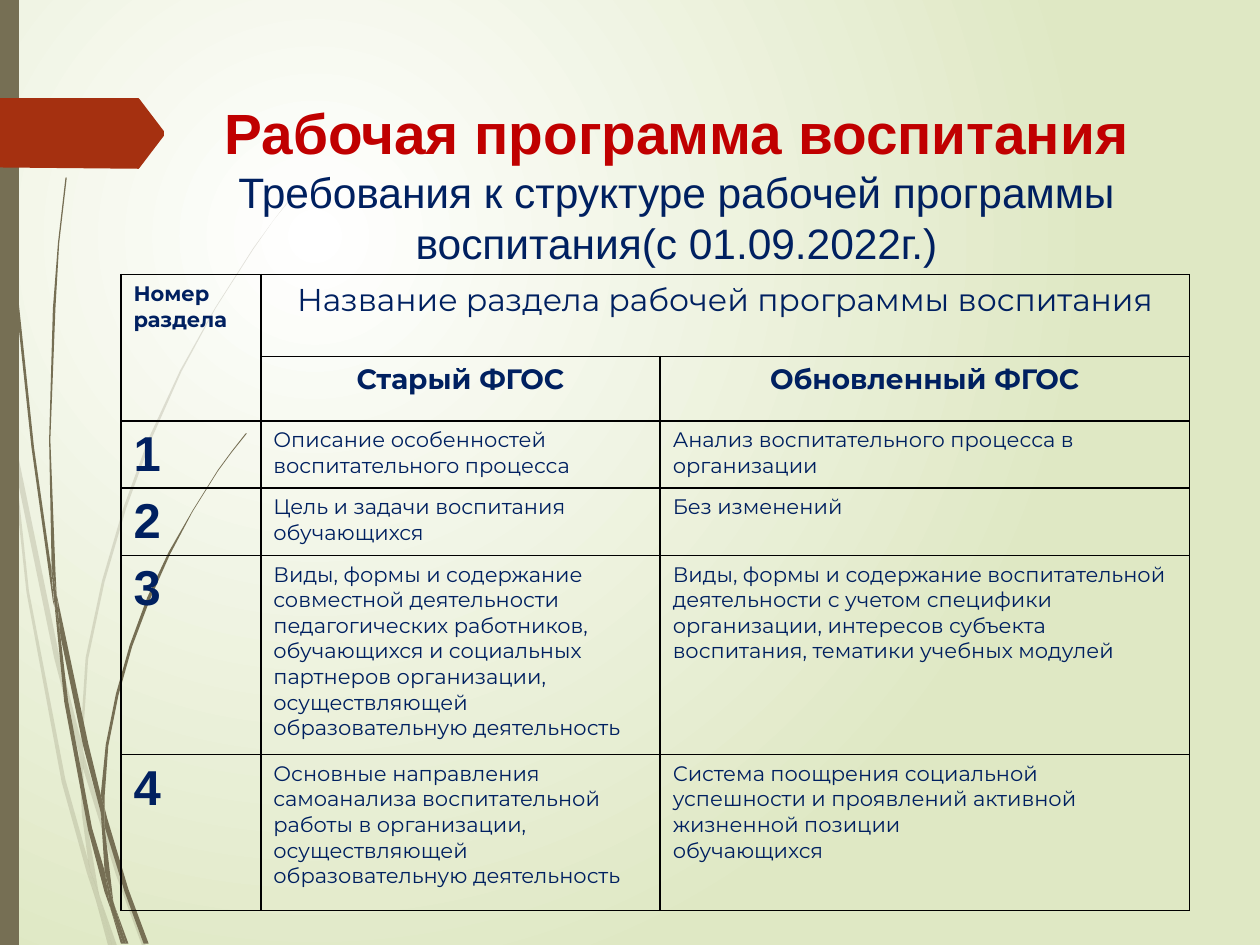
import itertools

import pptx
import pptx.dml.color
import pptx.enum.shapes
import pptx.enum.text
import pptx.oxml
import pptx.oxml.ns
import pptx.util

PX = 9144  # EMU in one px: 100 px to the inch
COLORS = {
    "white": "FFFFFF", "pale green": "DFE8C4", "olive": "766F54", "rust": "A53010",
    "red": "C00000", "navy": "002060", "black": "000000",
}
ALIGN = pptx.enum.text.PP_ALIGN

TITLE = "Рабочая программа воспитания"
SUBTITLE = "Требования к структуре рабочей программы воспитания(с 01.09.2022г.)"
HEADER_NUMBER = "Номер\nраздела"
HEADER_NAME = "Название раздела рабочей программы воспитания"
HEADER_VERSIONS = ("Старый ФГОС", "Обновленный ФГОС")
SECTIONS = [
    ("Описание особенностей воспитательного процесса",
     "Анализ воспитательного процесса в организации"),
    ("Цель и задачи воспитания обучающихся",
     "Без изменений"),
    ("Виды, формы и содержание совместной деятельности педагогических работников,\n"
     "обучающихся и социальных партнеров организации, осуществляющей\n"
     "образовательную деятельность",
     "Виды, формы и содержание воспитательной деятельности с учетом специфики "
     "организации, интересов субъекта воспитания, тематики учебных модулей"),
    ("Основные направления самоанализа воспитательной работы в организации,\n"
     "осуществляющей образовательную деятельность",
     "Система поощрения социальной успешности и проявлений активной жизненной позиции\n"
     "обучающихся"),
]
COLUMN_WIDTHS = (111, 317, 420)
ROW_HEIGHTS = (65, 51, 53, 53, 158, 124)

# Outlines of the grass blades, as corner points in px
FAINT_BLADES = [
    [(8, 350), (6, 322), (0, 282), (0, 299), (8, 344)],
    [(43, 522), (63, 599), (64, 586), (47, 520), (11, 345), (13, 376)],
    [(69, 607), (66, 596), (66, 610), (92, 694), (113, 751), (116, 751), (95, 692)],
    [(89, 751), (93, 751), (79, 711)],
    [(70, 683), (52, 619), (23, 469), (13, 376), (8, 350), (21, 470), (49, 621),
     (69, 693), (76, 714), (74, 707)],
    [(63, 599), (65, 646), (70, 683), (72, 692), (79, 711), (78, 706), (68, 646),
     (66, 610), (66, 608)],
    [(66, 584), (70, 523), (83, 462), (100, 404), (120, 349), (144, 295), (171, 245),
     (201, 198), (217, 175), (234, 154), (234, 153), (217, 175), (201, 197), (171, 244),
     (143, 294), (118, 348), (98, 403), (81, 461), (68, 522), (64, 584), (64, 586), (66, 596)],
    [(76, 714), (86, 751), (89, 751)],
    [(66, 608), (66, 610), (66, 596), (64, 586), (63, 599)],
    [(72, 692), (70, 683), (74, 707), (76, 714), (89, 751), (79, 711)],
]
SOLID_BLADES = [
    [(5, 110), (12, 233), (25, 355), (42, 477), (43, 481), (41, 457), (41, 453), (27, 355),
     (14, 232), (6, 109), (3, 48), (3, 0), (2, 0), (3, 48)],
    [(66, 592), (80, 645), (80, 633), (80, 631), (70, 590), (45, 472), (48, 505)],
    [(85, 649), (83, 641), (83, 656), (99, 708), (114, 749), (118, 749), (102, 706)],
    [(83, 691), (73, 657), (54, 556), (48, 505), (43, 477), (51, 557), (70, 659),
     (83, 708), (88, 722), (87, 717)],
    [(45, 472), (44, 453), (40, 349), (44, 245), (47, 193), (53, 141), (52, 141),
     (46, 193), (42, 245), (39, 349), (41, 449)],
    [(100, 749), (102, 749), (91, 719)],
    [(43, 477), (48, 505), (45, 472), (41, 449), (41, 453)],
    [(83, 633), (86, 592), (94, 552), (105, 513), (119, 476), (135, 440), (153, 406),
     (173, 374), (184, 359), (196, 344), (195, 344), (184, 358), (173, 373), (153, 405),
     (134, 438), (117, 474), (103, 512), (92, 551), (84, 591), (80, 631), (83, 641)],
    [(88, 722), (96, 749), (98, 749)],
    [(80, 645), (83, 691), (87, 706), (91, 719), (90, 716), (83, 656), (81, 651)],
    [(80, 645), (81, 651), (83, 656), (83, 641), (80, 631), (80, 633)],
    [(87, 706), (83, 691), (87, 717), (88, 722), (98, 749), (100, 749), (91, 719)],
]
PAGE_ARROW = [(130, 108), (111, 133), (110, 134), (0, 133), (0, 78), (110, 78),
              (111, 79), (130, 104)]


def rgb(color):
    return pptx.dml.color.RGBColor.from_string(COLORS[color])


def px(*lengths):
    return [pptx.util.Emu(length * PX) for length in lengths]


def write(frame, text, size, font="Montserrat", color="navy", bold=False, align=ALIGN.LEFT):
    """Add each line of text to the frame as a paragraph."""
    frame.word_wrap = True
    for line in text.split("\n"):
        paragraph = frame.add_paragraph() if frame.text else frame.paragraphs[0]
        paragraph.alignment = align
        run = paragraph.add_run()
        run.text = line
        run.font.size = pptx.util.Pt(size)
        run.font.name = font
        run.font.bold = bold
        run.font.color.rgb = rgb(color)


def parse_xml(tag, attributes="", content=""):
    return pptx.oxml.parse_xml(
        f'<a:{tag} {pptx.oxml.ns.nsdecls("a")} {attributes}>{content}</a:{tag}>')


def paint(shape, color, opacity=100):
    shape.shadow.inherit = False
    shape.fill.solid()
    shape.fill.fore_color.rgb = rgb(color)
    shape.line.fill.background()
    if opacity < 100:
        color_element = next(shape.element.iter(pptx.oxml.ns.qn("a:srgbClr")))
        color_element.append(parse_xml("alpha", f'val="{opacity * 1000}"'))


def draw_outline(slide, points, color, opacity=100):
    builder = slide.shapes.build_freeform(*points[0], scale=PX)
    builder.add_line_segments(points[1:], close=True)
    paint(builder.convert_to_shape(), color, opacity)


def set_background(slide):
    """Fill with a radial gradient centred a quarter of the way in and down."""
    fill = slide.background.fill
    fill.gradient()
    for stop, color in zip(fill.gradient_stops, ("white", "pale green")):
        stop.color.rgb = rgb(color)
    linear = next(slide.background._cSld.iter(pptx.oxml.ns.qn("a:lin")))
    linear.getparent().replace(linear, parse_xml(
        "path", 'path="circle"', '<a:fillToRect l="50000" t="50000" r="100000" b="100000"/>'))


def format_cell(cell):
    """Clear the fill and draw a thin border on every side."""
    cell.fill.background()
    properties = cell._tc.get_or_add_tcPr()
    for index, side in enumerate(("lnL", "lnR", "lnT", "lnB")):
        properties.insert(index, parse_xml(
            side, 'w="12700"',
            f'<a:solidFill><a:srgbClr val="{COLORS["black"]}"/></a:solidFill>'))


def add_title(slide):
    title = slide.shapes.title
    title.left, title.top, title.width, title.height = px(130, 68, 814, 140)
    frame = title.text_frame
    frame.auto_size = pptx.enum.text.MSO_AUTO_SIZE.NONE
    frame.vertical_anchor = pptx.enum.text.MSO_ANCHOR.TOP
    frame.margin_top = px(10)[0]
    write(frame, TITLE, 32.4, font="Arial", color="red", bold=True, align=ALIGN.CENTER)
    write(frame, SUBTITLE, 24.3, font="Arial", align=ALIGN.CENTER)
    title.element.getparent().append(title.element)


def add_sections_table(slide):
    table = slide.shapes.add_table(
        len(ROW_HEIGHTS), len(COLUMN_WIDTHS),
        *px(96, 218, sum(COLUMN_WIDTHS), sum(ROW_HEIGHTS))).table
    table.first_row = table.horz_banding = False
    for column, width in zip(table.columns, px(*COLUMN_WIDTHS)):
        column.width = width
    for row, height in zip(table.rows, px(*ROW_HEIGHTS)):
        row.height = height
    for position in itertools.product(range(len(ROW_HEIGHTS)), range(len(COLUMN_WIDTHS))):
        format_cell(table.cell(*position))
    table.cell(0, 0).merge(table.cell(1, 0))
    table.cell(0, 1).merge(table.cell(0, 2))

    write(table.cell(0, 0).text_frame, HEADER_NUMBER, 12, bold=True)
    write(table.cell(0, 1).text_frame, HEADER_NAME, 18, align=ALIGN.CENTER)
    for column, version in enumerate(HEADER_VERSIONS, start=1):
        write(table.cell(1, column).text_frame, version, 16, bold=True, align=ALIGN.CENTER)
    for number, names in enumerate(SECTIONS, start=1):
        row = number + 1
        write(table.cell(row, 0).text_frame, str(number), 28, font="Arial", bold=True)
        for column, name in enumerate(names, start=1):
            write(table.cell(row, column).text_frame, name, 12)


def main():
    presentation = pptx.Presentation()
    presentation.slide_width, presentation.slide_height = px(1000, 750)
    slide = presentation.slides.add_slide(presentation.slide_layouts[5])
    set_background(slide)
    for blades, opacity in ((FAINT_BLADES, 20), (SOLID_BLADES, 100)):
        for blade in blades:
            draw_outline(slide, blade, "olive", opacity)
    side_bar = slide.shapes.add_shape(
        pptx.enum.shapes.MSO_SHAPE.RECTANGLE, *px(0, 0, 15, 750))
    paint(side_bar, "olive")
    draw_outline(slide, PAGE_ARROW, "rust")
    add_title(slide)
    add_sections_table(slide)
    presentation.save("out.pptx")


if __name__ == "__main__":
    main()
